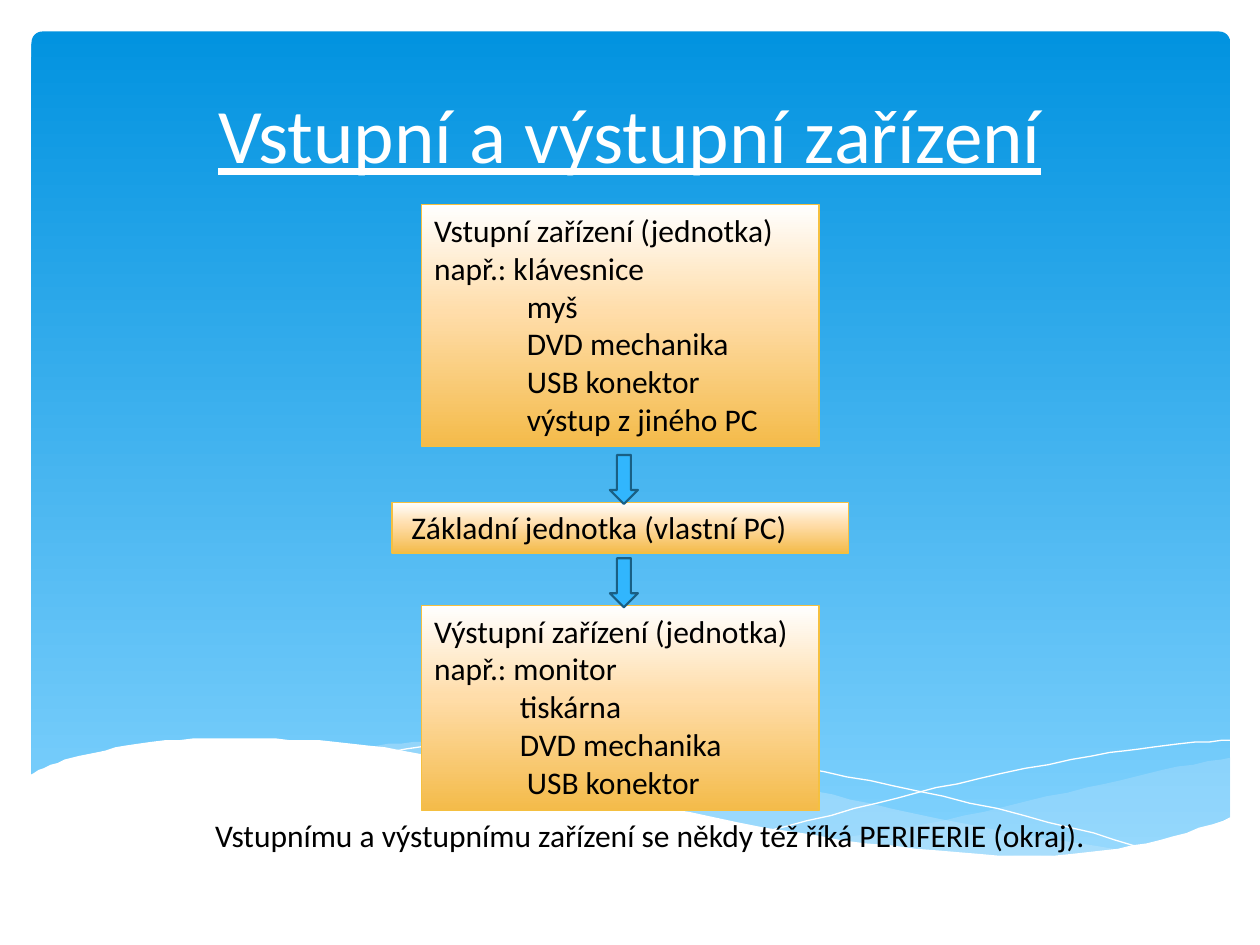
from copy import deepcopy
from dataclasses import dataclass

from pptx import Presentation
from pptx.dml.color import RGBColor
from pptx.enum import shapes, text
from pptx.oxml import ns, xmlchemy
from pptx.util import Pt


@dataclass(frozen=True)
class Theme:
    font: str = "Calibri"
    title_size: int = 44
    body_size: int = 18
    white: str = "FFFFFF"
    black: str = "000000"
    sky: tuple = ((0, "0293E0"), (1, "83D3FE"))
    amber: tuple = ((0, "FFFFFF"), (0.44, "FFDDAA"), (1, "F4BB4A"))
    amber_edge: str = "F5C040"
    arrow: str = "31B6FD"
    arrow_edge: str = "195F84"
    wave: str = "C6E7FC"


THEME = Theme()
DEEP, SHALLOW = 53, 49

RIGHT_WAVE = (
    [(703, 433), (664, 440), (621, 450), (562, 464), (509, 474.5), (477, 480)],
    [(477, 480), (508, 484.5), (546, 488), (587, 489.5), (629, 487), (664, 480), (703, 467)],
)
LEFT_WAVE = (
    [(644, 486), (582, 476.5), (509, 462), (454, 449), (390, 435), (335, 427),
     (274, 422.6), (236, 424), (207, 427)],
    [(207, 427), (261, 435), (324, 449), (382, 462), (446, 475), (501, 484),
     (549, 489), (590, 489.6), (644, 486)],
)
FALLING_LINE = (
    [(223, 430), (254, 425.5), (300, 424), (352, 426), (401, 430.6), (459, 439),
     (524, 452), (599, 469.5), (654, 484.6)],
)
RISING_LINE = (
    [(442, 474.5), (501, 458.6), (559, 445), (624, 432), (666, 426), (703, 422.6)],
)
WHITE_GROUND = (
    [(703, 467), (670, 478), (630, 486), (582, 489), (523, 485), (451, 475),
     (381, 461.5), (322, 448), (263, 435), (210, 426), (166, 422.6), (127, 422),
     (86, 424), (55, 430), (33, 435.6), (17, 443)],
    [(17, 526), (703, 526)],
)


def rgb(code):
    return RGBColor.from_string(code)


def smooth(knots, steps=5):
    if len(knots) < 3:
        return knots
    padded = [knots[0], *knots, knots[-1]]
    curve = [knots[0]]
    for a, b, c, d in zip(padded, padded[1:], padded[2:], padded[3:]):
        for step in range(1, steps + 1):
            t = step / steps
            curve.append(tuple(
                (2 * q + (r - p) * t + (2 * p - 5 * q + 4 * r - s) * t ** 2
                 + (3 * q - p - 3 * r + s) * t ** 3) / 2
                for p, q, r, s in zip(a, b, c, d)))
    return curve


def set_gradient(shape, stops):
    shape.fill.gradient()
    shape.fill.gradient_angle = 270
    stop_list = shape._element.spPr.find(".//" + ns.qn("a:gsLst"))
    for _ in stops[2:]:
        stop_list.append(deepcopy(stop_list[-1]))
    for stop, (position, code) in zip(shape.fill.gradient_stops, stops):
        stop.color.rgb = rgb(code)
        stop.position = position


def set_line(shape, code, width):
    shape.line.color.rgb = rgb(code)
    shape.line.width = Pt(width)


def add_curve(slide, edges, fill=None, alpha=100, closed=True):
    outline = [point for edge in edges for point in smooth(edge)]
    builder = slide.shapes.build_freeform(*outline[0], scale=Pt(1))
    builder.add_line_segments(outline[1:], close=closed)
    curve = builder.convert_to_shape()
    curve.shadow.inherit = False
    if not closed:
        curve.fill.background()
        set_line(curve, THEME.white, 0)
        return
    curve.line.fill.background()
    curve.fill.solid()
    curve.fill.fore_color.rgb = rgb(fill)
    if alpha < 100:
        color = curve._element.spPr.find(ns.qn("a:solidFill"))[0]
        color.append(xmlchemy.OxmlElement("a:alpha"))
        color[0].set("val", str(alpha * 1000))


def add_panel(slide):
    panel = slide.shapes.add_shape(
        shapes.MSO_SHAPE.ROUNDED_RECTANGLE, Pt(18), Pt(18), Pt(685), Pt(475))
    panel.adjustments[0] = 0.013
    panel.shadow.inherit = False
    panel.line.fill.background()
    set_gradient(panel, THEME.sky)


def write(frame, lines, size, color, align, underline=None):
    frame.word_wrap = True
    for number, (wording, indent) in enumerate(lines):
        paragraph = frame.add_paragraph() if number else frame.paragraphs[0]
        paragraph.alignment = align
        if indent:
            paragraph._p.get_or_add_pPr().set("marL", str(Pt(indent)))
        run = paragraph.add_run()
        run.text = wording
        run.font.name = THEME.font
        run.font.size = Pt(size)
        run.font.color.rgb = rgb(color)
        run.font.underline = underline


def add_caption(slide, box, wording, size, color, anchor, underline=None):
    frame = slide.shapes.add_textbox(*map(Pt, box)).text_frame
    frame.vertical_anchor = anchor
    write(frame, [(wording, 0)], size, color, text.PP_ALIGN.CENTER, underline)


def add_unit(slide, box, lines):
    unit = slide.shapes.add_shape(shapes.MSO_SHAPE.RECTANGLE, *map(Pt, box))
    unit.shadow.inherit = False
    set_gradient(unit, THEME.amber)
    set_line(unit, THEME.amber_edge, 0.75)
    unit.text_frame.vertical_anchor = text.MSO_ANCHOR.TOP
    write(unit.text_frame, lines, THEME.body_size, THEME.black, text.PP_ALIGN.LEFT)


def add_arrow(slide, top):
    arrow = slide.shapes.add_shape(
        shapes.MSO_SHAPE.RIGHT_ARROW, Pt(342.5), Pt(top), Pt(28), Pt(16))
    arrow.rotation = 90
    arrow.shadow.inherit = False
    arrow.fill.solid()
    arrow.fill.fore_color.rgb = rgb(THEME.arrow)
    set_line(arrow, THEME.arrow_edge, 1.25)


def main():
    deck = Presentation()
    deck.slide_width, deck.slide_height = Pt(720), Pt(540)
    slide = deck.slides.add_slide(deck.slide_layouts[6])

    add_panel(slide)
    add_curve(slide, RIGHT_WAVE, THEME.wave, 29)
    add_curve(slide, LEFT_WAVE, THEME.wave, 40)
    add_curve(slide, FALLING_LINE, closed=False)
    add_curve(slide, RISING_LINE, closed=False)
    add_curve(slide, WHITE_GROUND, THEME.white)

    add_caption(slide, (54, 43, 612, 63), "Vstupní a výstupní zařízení",
                THEME.title_size, THEME.white, text.MSO_ANCHOR.BOTTOM, True)
    add_unit(slide, (241, 117, 227, 138), [
        ("Vstupní zařízení (jednotka)", 0), ("např.: klávesnice", 0), ("myš", DEEP),
        ("DVD mechanika", DEEP), ("USB konektor", DEEP), ("výstup z jiného PC", DEEP)])
    add_unit(slide, (224, 287, 261, 29), [("Základní jednotka (vlastní PC)", 4)])
    add_unit(slide, (241, 346, 227, 117), [
        ("Výstupní zařízení (jednotka)", 0), ("např.: monitor", 0),
        ("tiskárna", SHALLOW), ("DVD mechanika", SHALLOW), ("USB konektor", DEEP)])
    for top in (266, 325):
        add_arrow(slide, top)
    add_caption(slide, (48, 463, 647, 29),
                "Vstupnímu a výstupnímu zařízení se někdy též říká PERIFERIE (okraj).",
                THEME.body_size, THEME.black, text.MSO_ANCHOR.TOP)
    deck.save("out.pptx")


if __name__ == "__main__":
    main()
